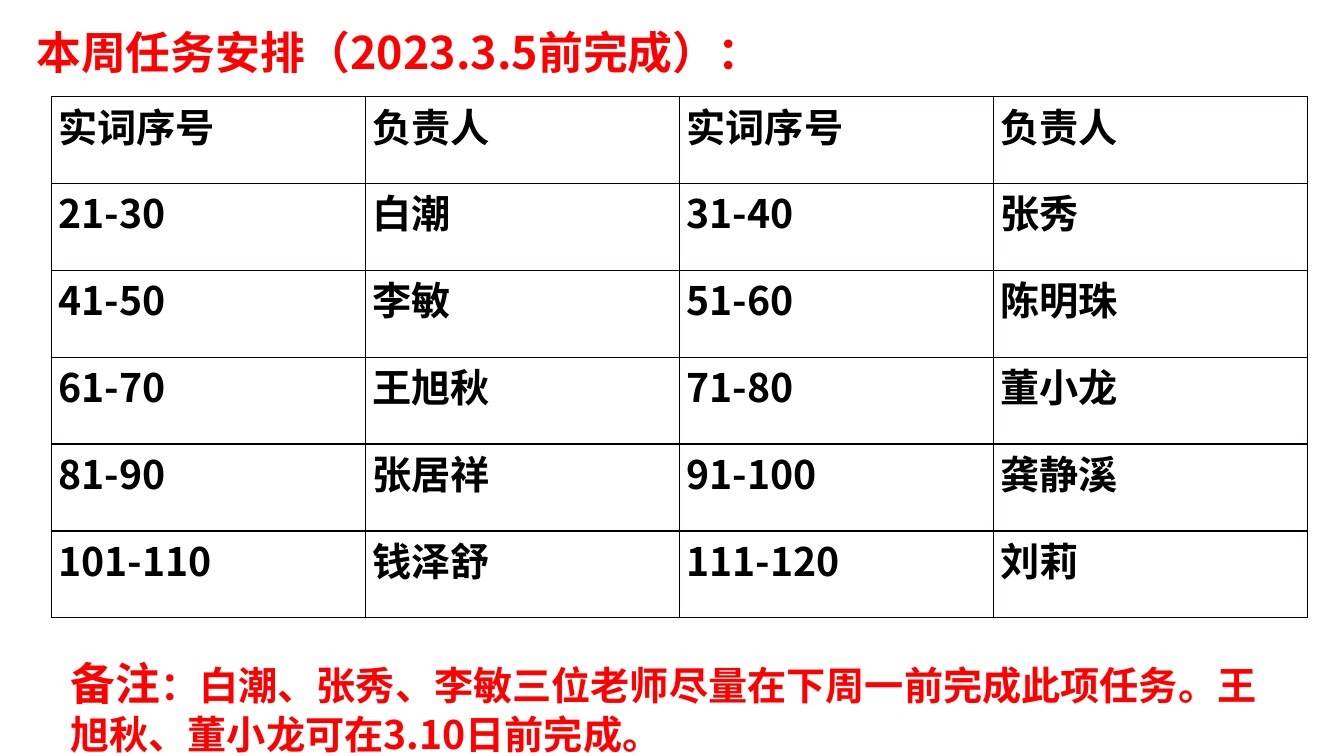
from typing import NamedTuple

from lxml import etree
from pptx import Presentation
from pptx.dml.color import RGBColor
from pptx.enum.text import MSO_ANCHOR, MSO_AUTO_SIZE, PP_ALIGN
from pptx.oxml.ns import qn
from pptx.util import Inches, Pt

FONT = "Noto Sans CJK SC"
RED, BLACK, BORDER = "FF0000", "000000", "080000"
LEFT, TOP = PP_ALIGN.LEFT, MSO_ANCHOR.TOP
GROW = MSO_AUTO_SIZE.SHAPE_TO_FIT_TEXT


class Box(NamedTuple):
    left: float
    top: float
    width: float
    height: float


class Task(NamedTuple):
    numbers: str
    owner: str


HEADER = Task("实词序号", "负责人")
TASK_ROWS = [
    (HEADER, HEADER),
    (Task("21-30", "白潮"), Task("31-40", "张秀")),
    (Task("41-50", "李敏"), Task("51-60", "陈明珠")),
    (Task("61-70", "王旭秋"), Task("71-80", "董小龙")),
    (Task("81-90", "张居祥"), Task("91-100", "龚静溪")),
    (Task("101-110", "钱泽舒"), Task("111-120", "刘莉")),
]
TITLE_BOX = Box(0.26, 0.19, 12.82, 0.64)
TABLE_BOX = Box(0.51, 0.96, 12.46, 5.17)
NOTE_BOX = Box(0.6, 6.46, 12.34, 1.11)


def rgb(color: str) -> RGBColor:
    return RGBColor.from_string(color)


def format_run(r, size: float, color: str) -> None:
    r.font.size = Pt(size)
    r.font.bold = True
    r.font.name = FONT
    r.font.color.rgb = rgb(color)
    latin = r.font._element.find(qn("a:latin"))
    ea = etree.Element(qn("a:ea"), typeface=FONT)
    latin.addnext(ea)


def place(sp, box: Box) -> None:
    sp.left, sp.top, sp.width, sp.height = map(Inches, box)


def set_frame(tf) -> None:
    tf.word_wrap = True
    tf.auto_size = GROW
    tf.vertical_anchor = TOP
    tf.paragraphs[0].alignment = LEFT


def add_borders(cell) -> None:
    tc_pr = cell._tc.get_or_add_tcPr()
    for side in ("lnL", "lnR", "lnT", "lnB"):
        ln = etree.SubElement(tc_pr, qn(f"a:{side}"), w=str(Pt(1)))
        fill = etree.SubElement(ln, qn("a:solidFill"))
        etree.SubElement(fill, qn("a:srgbClr"), val=BORDER)


def fill_cell(cell, text: str) -> None:
    cell.margin_left = cell.margin_right = Inches(0.07)
    cell.margin_top = cell.margin_bottom = 0
    cell.text_frame.text = text
    format_run(cell.text_frame.paragraphs[0].runs[0], 28, BLACK)
    add_borders(cell)
    cell.fill.background()


def add_title(slide) -> None:
    title = slide.shapes.title
    place(title, TITLE_BOX)
    tf = title.text_frame
    tf.text = "本周任务安排（2023.3.5前完成）："
    set_frame(tf)
    format_run(tf.paragraphs[0].runs[0], 32, RED)


def add_task_table(slide) -> None:
    rows = [[text for task in pair for text in task] for pair in TASK_ROWS]
    n_rows, n_cols = len(rows), len(rows[0])
    table = slide.shapes.add_table(n_rows, n_cols, *map(Inches, TABLE_BOX)).table
    table.first_row = table.horz_banding = False
    for column in table.columns:
        column.width = Inches(TABLE_BOX.width / n_cols)
    for row, texts in zip(table.rows, rows):
        row.height = Inches(TABLE_BOX.height / n_rows)
        for cell, text in zip(row.cells, texts):
            fill_cell(cell, text)


def add_note(slide) -> None:
    tf = slide.shapes.add_textbox(*map(Inches, NOTE_BOX)).text_frame
    set_frame(tf)
    p = tf.paragraphs[0]
    for text, size in (
        ("备注", 32),
        ("：白潮、张秀、李敏三位老师尽量在下周一前完成此项任务。王旭秋、董小龙可在3.10日前完成。", 28),
    ):
        r = p.add_run()
        r.text = text
        format_run(r, size, RED)


def main() -> None:
    prs = Presentation()
    prs.slide_width, prs.slide_height = Inches(13.33), Inches(7.5)
    slide = prs.slides.add_slide(prs.slide_layouts[5])
    add_title(slide)
    add_task_table(slide)
    add_note(slide)
    prs.save("out.pptx")


if __name__ == "__main__":
    main()
